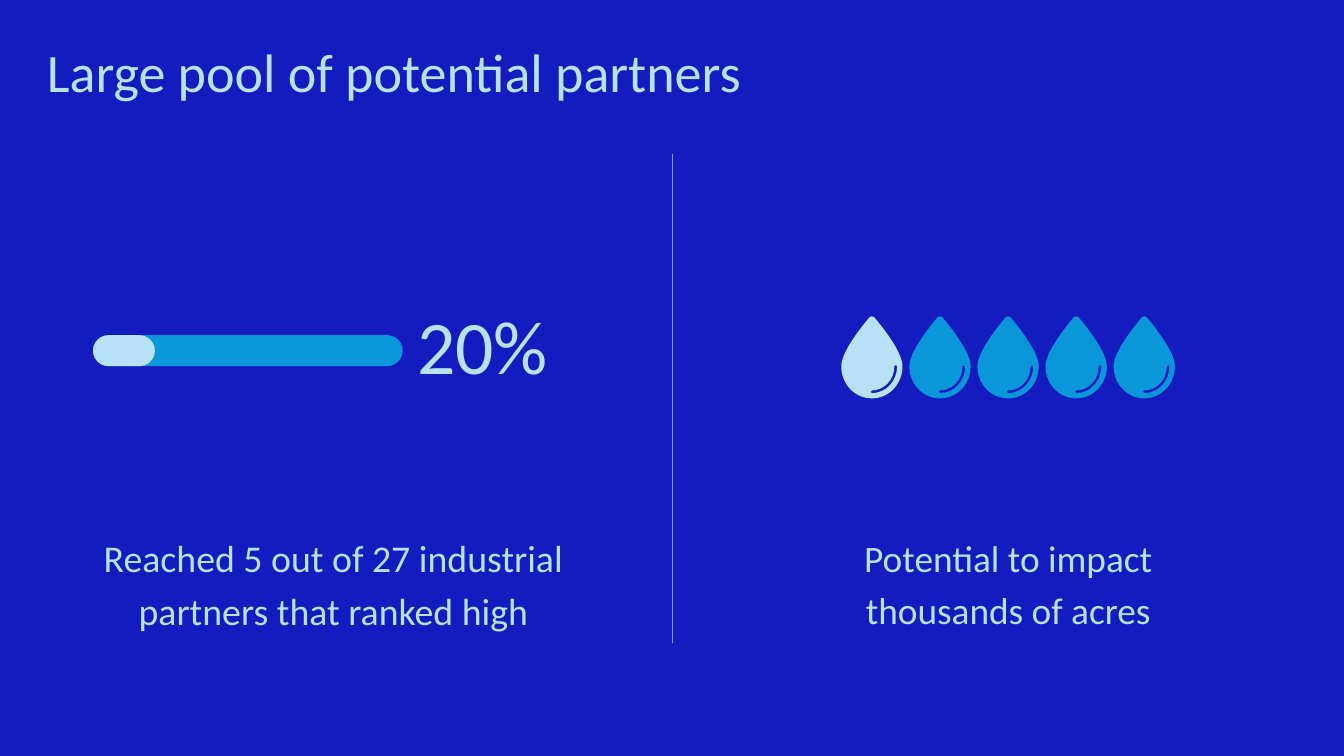
from lxml import etree
from pptx import Presentation
from pptx.dml.color import RGBColor
from pptx.enum.shapes import MSO_SHAPE
from pptx.enum.text import MSO_ANCHOR, MSO_AUTO_SIZE, PP_ALIGN
from pptx.oxml.ns import qn
from pptx.util import Pt

LEFT, CENTER = PP_ALIGN.LEFT, PP_ALIGN.CENTER
TOP = MSO_ANCHOR.TOP
GROW = MSO_AUTO_SIZE.SHAPE_TO_FIT_TEXT
RECTANGLE, ROUNDED = MSO_SHAPE.RECTANGLE, MSO_SHAPE.ROUNDED_RECTANGLE

COLORS = {"background": "151CBF", "pale": "B7E1F7", "bright": "0A97D9"}
FONT = "Calibri"
DROP_PITCH = 72.96
DROP_OUTLINE = [
    (0, 88.4),
    (18.2, 88.4), (32.8, 73.3), (32.8, 54),
    (32.8, 38.2), (9.8, 10.1), (2.6, 1.6),
    (1.3, 0), (-1.3, 0), (-2.6, 1.6),
    (-9.8, 10.1), (-32.8, 38.2), (-32.8, 54),
    (-32.8, 73.3), (-18.2, 88.4), (0, 88.4),
]
DROP_GLINT = [
    (27, 54),
    (27, 70.6), (14.4, 82.8), (0, 82.8),
    (-2, 82.8), (-2, 79.9), (0, 79.9),
    (12.6, 79.9), (24.1, 69.1), (24.1, 54),
    (24.1, 52.2), (27, 52.2), (27, 54),
]


def color(name):
    """Return the named colour."""
    return RGBColor.from_string(COLORS[name])


def paint(shape, fill):
    """Give a shape a flat fill without line or shadow."""
    shape.shadow.inherit = False
    shape.fill.solid()
    shape.fill.fore_color.rgb = color(fill)
    shape.line.fill.background()


def add_block(slide, kind, box, fill):
    """Add a flat preset shape in the given box."""
    block = slide.shapes.add_shape(kind, *map(Pt, box))
    paint(block, fill)
    return block


def write(slide, text, box, size, leading, align=LEFT, holder=None):
    """Write text in a placeholder or in a new text box."""
    holder = holder or slide.shapes.add_textbox(*map(Pt, box))
    holder.left, holder.top, holder.width, holder.height = map(Pt, box)
    frame = holder.text_frame
    frame.margin_left = frame.margin_right = 0
    frame.margin_top = frame.margin_bottom = 0
    frame.word_wrap = True
    frame.auto_size = GROW
    frame.vertical_anchor = TOP
    paragraph = frame.paragraphs[0]
    paragraph.alignment = align
    paragraph.line_spacing = Pt(leading)
    run = paragraph.add_run()
    run.text = text
    run.font.size = Pt(size)
    run.font.name = FONT
    run.font.color.rgb = color("pale")


def bend(shape):
    """Turn every three line segments of a freeform into one cubic curve."""
    segments = list(shape.element.iter(qn("a:lnTo")))
    for start in range(0, len(segments), 3):
        curve = etree.Element(qn("a:cubicBezTo"))
        segments[start].addprevious(curve)
        for segment in segments[start:start + 3]:
            curve.append(segment[0])
            segment.getparent().remove(segment)


def add_drops(slide, x, y, count, fill):
    """Draw a row of water drops as one outline, the first centred on x."""
    contours = [[(Pt(x + index * DROP_PITCH + px), Pt(y + py)) for px, py in contour]
                for index in range(count) for contour in (DROP_OUTLINE, DROP_GLINT)]
    builder = slide.shapes.build_freeform(*contours[0][0])
    for index, points in enumerate(contours):
        if index:
            builder.move_to(*points[0])
        builder.add_line_segments(points[1:], close=True)
    drops = builder.convert_to_shape()
    bend(drops)
    paint(drops, fill)


def add_reach_panel(slide, x, y):
    """Place the progress bar, its share and its caption."""
    write(slide, "20%", (x + 447.1, y + 138.8, 186.5, 120.2), 81.1, 113.5)
    width, share = 331.8, 0.2
    for part, fill in ((1, "bright"), (share, "pale")):
        bar = add_block(slide, ROUNDED, (x + 99.6, y + 194.1, width * part, 33.2), fill)
        bar.adjustments[0] = 0.5
    write(slide, "Reached 5 out of 27 industrial partners that ranked high",
          (x + 81, y + 400.2, 553, 175.7), 40.5, 56.6, CENTER)


def add_impact_panel(slide, x, y):
    """Place the row of drops and its caption."""
    first = x + 214.2
    add_drops(slide, first, y + 173.4, 1, "pale")
    add_drops(slide, first + DROP_PITCH, y + 173.4, 4, "bright")
    write(slide, "Potential to impact thousands of acres",
          (x + 159.8, y + 400.2, 401, 118), 40, 56, CENTER)


def main():
    """Build the slide and save it."""
    deck = Presentation()
    deck.slide_width, deck.slide_height = Pt(1440), Pt(810)
    slide = deck.slides.add_slide(deck.slide_layouts[5])
    slide.background.fill.solid()
    slide.background.fill.fore_color.rgb = color("background")
    write(slide, "Large pool of potential partners", (50.2, 29.5, 902, 172),
          58, 81.2, holder=slide.shapes.title)
    add_reach_panel(slide, 0, 165)
    add_impact_panel(slide, 720, 165)
    add_block(slide, RECTANGLE, (720, 165, 0.7, 524), "pale")
    deck.save("out.pptx")


if __name__ == "__main__":
    main()
